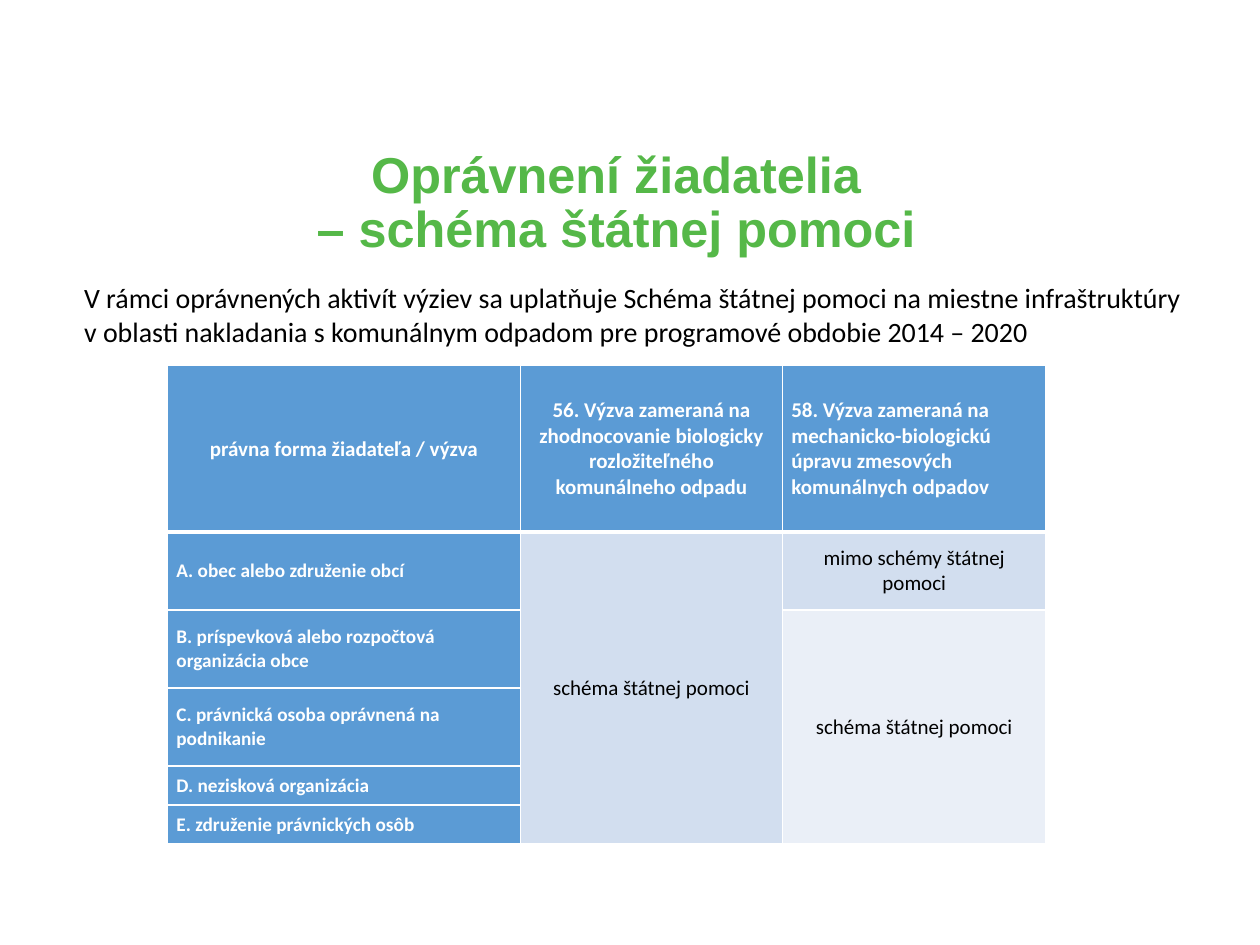
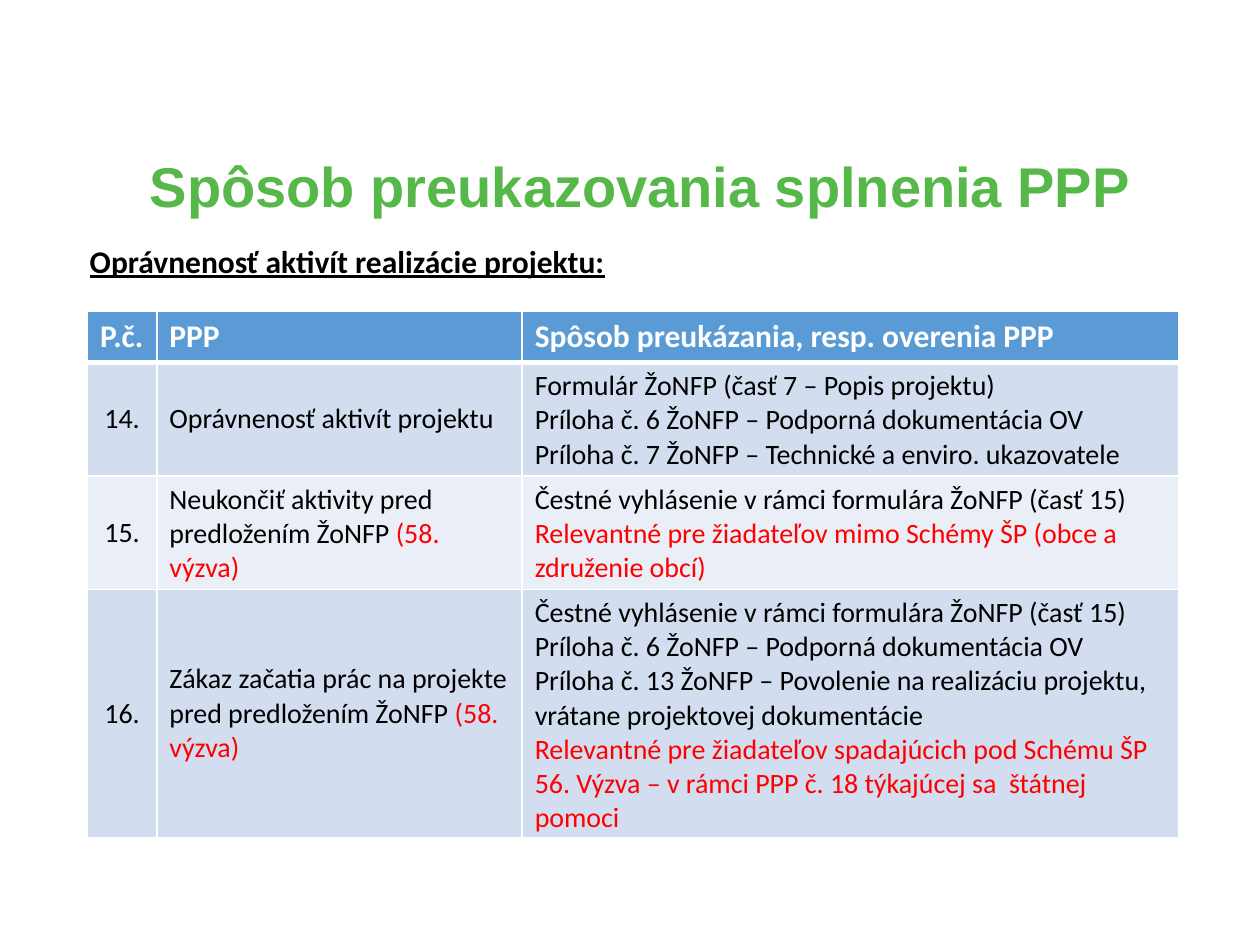
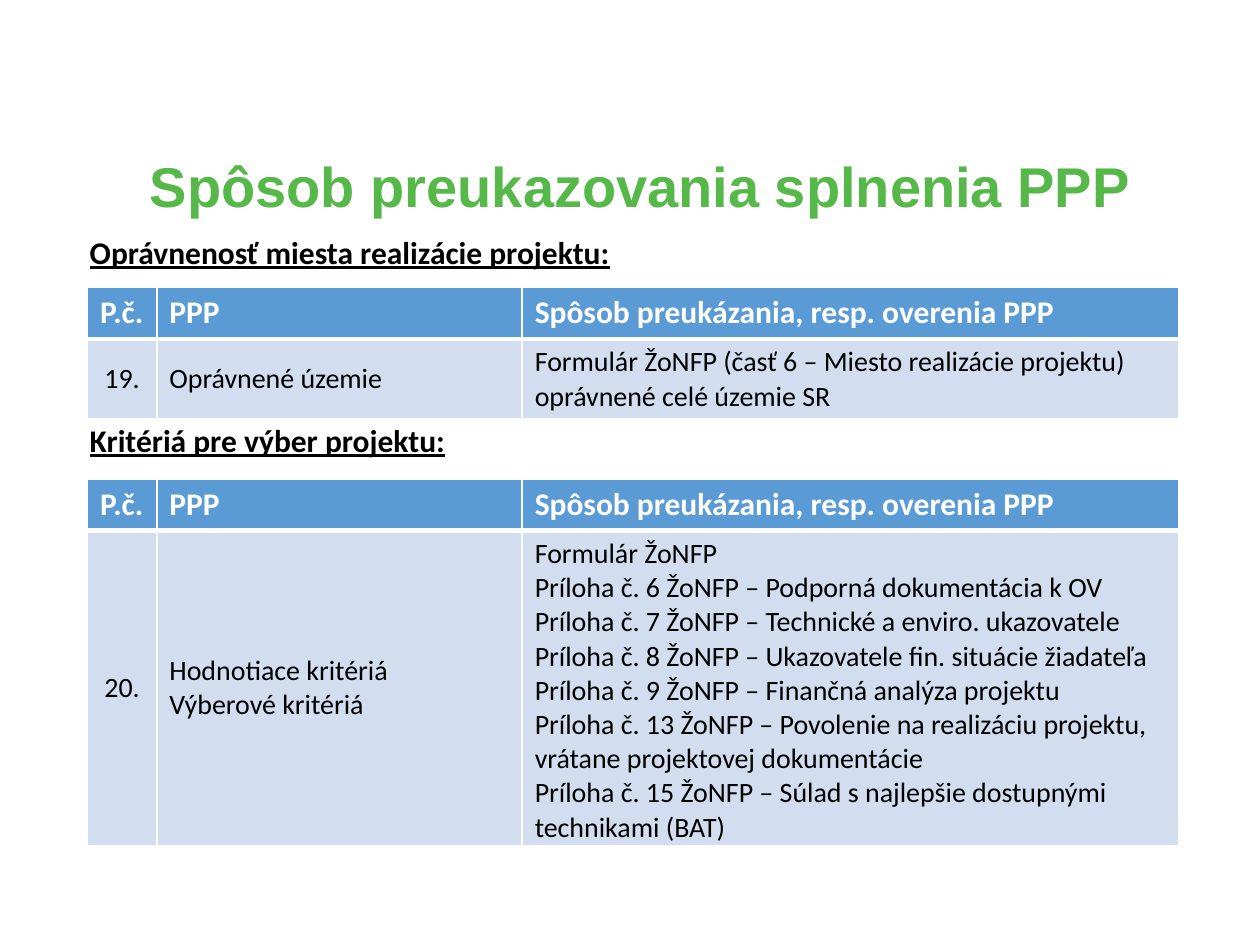
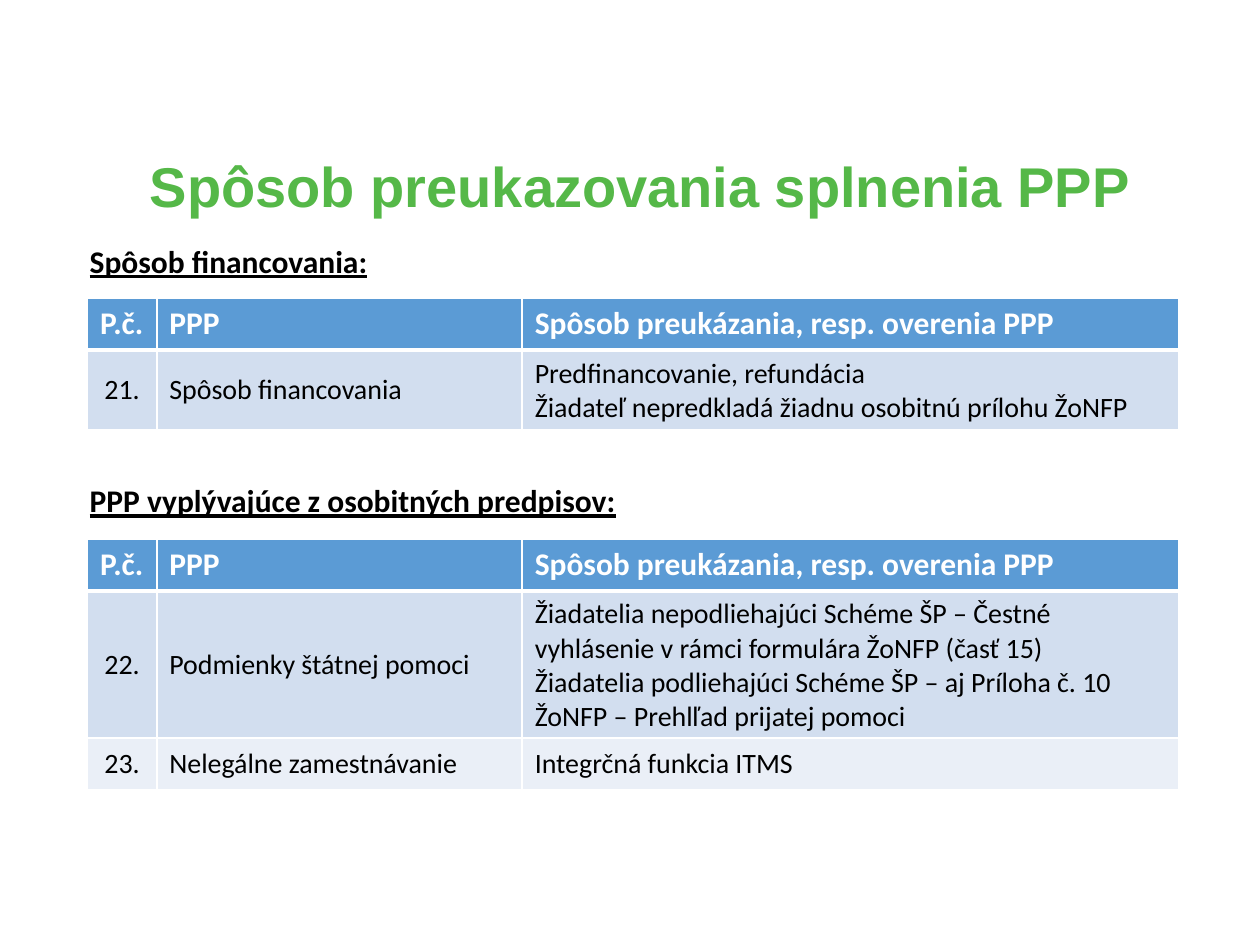
from lxml.etree import SubElement
from pptx import Presentation
from pptx.dml.color import RGBColor
from pptx.enum.text import MSO_ANCHOR, MSO_AUTO_SIZE, PP_ALIGN
from pptx.oxml.ns import qn
from pptx.util import Pt

COLORS = {"green": "55B848", "blue": "5B9BD5", "band": "D2DEEF", "pale": "EAEFF7",
          "white": "FFFFFF", "black": "000000", "red": "FF0000"}
HEAD_FONT, BODY_FONT = "Arial", "Calibri"

# Slide 1: (row, column, rows spanned, text, fill, size, align)
AID_TITLE = "Oprávnení žiadatelia\v– schéma štátnej pomoci"
AID_INTRO = ("V rámci oprávnených aktivít výziev sa uplatňuje Schéma štátnej pomoci na miestne "
             "infraštruktúry v oblasti nakladania s komunálnym odpadom pre programové obdobie "
             "2014 – 2020")
AID_COLS = [201.6, 149.8, 150.5]
AID_ROWS = [95, 44.6, 44.6, 44.6, 22.3, 22.3]
AID_CELLS = [
    (0, 0, 1, "právna forma žiadateľa / výzva", "blue", 12, "center"),
    (0, 1, 1, "56. Výzva zameraná na zhodnocovanie biologicky rozložiteľného "
              "komunálneho odpadu", "blue", 12, "center"),
    (0, 2, 1, "58. Výzva zameraná na mechanicko-biologickú úpravu zmesových "
              "komunálnych odpadov", "blue", 12, "left"),
    (1, 0, 1, "A. obec alebo združenie obcí", "blue", 11, "left"),
    (2, 0, 1, "B. príspevková alebo rozpočtová organizácia obce", "blue", 11, "left"),
    (3, 0, 1, "C. právnická osoba oprávnená na podnikanie", "blue", 11, "left"),
    (4, 0, 1, "D. nezisková organizácia", "blue", 11, "left"),
    (5, 0, 1, "E. združenie právnických osôb", "blue", 11, "left"),
    (1, 1, 5, "schéma štátnej pomoci", "band", 12, "center"),
    (1, 2, 1, "mimo schémy štátnej pomoci", "band", 12, "center"),
    (2, 2, 4, "schéma štátnej pomoci", "pale", 12, "center"),
]

# Slides 2 to 4: sections of (heading, heading top, table top, rows);
# a row is (number, condition, proof, lines of text).
# A paragraph is a string, or a pair of a black and a red part.
PPP_TITLE = "Spôsob preukazovania splnenia PPP"
PPP_HEADER = ["P.č.", "PPP", "Spôsob preukázania, resp. overenia PPP"]
PPP_COLS = [39.6, 208.8, 375.1]
PPP_SLIDES = [
    [("Oprávnenosť aktivít realizácie projektu:", 134.6, 177.8, [
        ("14.", ["Oprávnenosť aktivít projektu"],
         ["Formulár ŽoNFP (časť 7 – Popis projektu)",
          "Príloha č. 6 ŽoNFP – Podporná dokumentácia OV",
          "Príloha č. 7 ŽoNFP – Technické a enviro. ukazovatele"], 3),
        ("15.", [("Neukončiť aktivity pred predložením ŽoNFP ", "(58. výzva)")],
         ["Čestné vyhlásenie v rámci formulára ŽoNFP (časť 15)",
          ("", "Relevantné pre žiadateľov mimo Schémy ŠP (obce a združenie obcí)")], 3),
        ("16.", [("Zákaz začatia prác na projekte pred predložením ŽoNFP ", "(58. výzva)")],
         ["Čestné vyhlásenie v rámci formulára ŽoNFP (časť 15)",
          "Príloha č. 6 ŽoNFP – Podporná dokumentácia OV",
          "Príloha č. 13 ŽoNFP – Povolenie na realizáciu projektu, vrátane projektovej "
          "dokumentácie",
          ("", "Relevantné pre žiadateľov spadajúcich pod Schému ŠP"),
          ("", "56. Výzva – v rámci PPP č. 18 týkajúcej sa  štátnej pomoci")], 7),
    ])],
    [("Oprávnenosť miesta realizácie projektu:", 129.6, 164.2, [
        ("19.", ["Oprávnené územie"],
         ["Formulár ŽoNFP (časť 6 – Miesto realizácie projektu) oprávnené celé územie SR"], 2),
    ]),
     ("Kritériá pre výber projektu:", 237, 273.6, [
         ("20.", ["Hodnotiace kritériá", "Výberové kritériá"],
          ["Formulár ŽoNFP",
           "Príloha č. 6 ŽoNFP – Podporná dokumentácia k OV",
           "Príloha č. 7 ŽoNFP – Technické a enviro. ukazovatele",
           "Príloha č. 8 ŽoNFP – Ukazovatele fin. situácie žiadateľa",
           "Príloha č. 9 ŽoNFP – Finančná analýza projektu",
           "Príloha č. 13 ŽoNFP – Povolenie na realizáciu projektu, vrátane projektovej "
           "dokumentácie",
           "Príloha č. 15 ŽoNFP – Súlad s najlepšie dostupnými technikami (BAT)"], 9),
     ])],
    [("Spôsob financovania:", 134.6, 170.6, [
        ("21.", ["Spôsob financovania"],
         ["Predfinancovanie, refundácia",
          "Žiadateľ nepredkladá žiadnu osobitnú prílohu ŽoNFP"], 2),
    ]),
     ("PPP vyplývajúce z osobitných predpisov:", 271.4, 308.2, [
         ("22.", ["Podmienky štátnej pomoci"],
          ["Žiadatelia nepodliehajúci Schéme ŠP – Čestné vyhlásenie v rámci formulára "
           "ŽoNFP (časť 15)",
           "Žiadatelia podliehajúci Schéme ŠP – aj Príloha č. 10 ŽoNFP – Prehlľad "
           "prijatej pomoci"], 4),
         ("23.", ["Nelegálne zamestnávanie"], ["Integrčná funkcia ITMS"], 1),
     ])],
]

ALIGN = {"left": PP_ALIGN.LEFT, "center": PP_ALIGN.CENTER}


def rgb(name):
    return RGBColor.from_string(COLORS[name])


def style(para, size, color="black", bold=False, font=BODY_FONT, align="left"):
    para.alignment = ALIGN[align]
    face = para.font
    face.name, face.size, face.bold = font, Pt(size), bold
    face.color.rgb = rgb(color)


def add_slide(deck, title, left, top, width, height, size):
    slide = deck.slides.add_slide(deck.slide_layouts[5])
    box = slide.shapes.title
    box.left, box.top, box.width, box.height = Pt(left), Pt(top), Pt(width), Pt(height)
    frame = box.text_frame
    frame.text = title
    frame.auto_size = MSO_AUTO_SIZE.NONE
    frame.vertical_anchor = MSO_ANCHOR.MIDDLE
    para = frame.paragraphs[0]
    para.line_spacing = 0.9
    style(para, size, "green", True, HEAD_FONT, "center")
    return slide


def add_text(slide, text, left, top, width, height):
    frame = slide.shapes.add_textbox(Pt(left), Pt(top), Pt(width), Pt(height)).text_frame
    frame.word_wrap = True
    frame.text = text
    return frame.paragraphs[0]


def add_grid(slide, left, top, cols, rows):
    """Add a table with white rules, thicker below the header row."""
    table = slide.shapes.add_table(len(rows), len(cols), Pt(left), Pt(top),
                                   Pt(sum(cols)), Pt(sum(rows))).table
    table.horz_banding = False
    for col, width in zip(table.columns, cols):
        col.width = Pt(width)
    for i, (row, height) in enumerate(zip(table.rows, rows)):
        row.height = Pt(height)
        for cell in row.cells:
            add_rules(cell, i)
    return table


def add_rules(cell, row):
    thick = {(0, "lnB"), (1, "lnT")}
    props = cell._tc.get_or_add_tcPr()
    for side in ("lnL", "lnR", "lnT", "lnB"):
        width = Pt(3 if (row, side) in thick else 1)
        line = SubElement(props, qn(f"a:{side}"), w=str(width))
        fill = SubElement(line, qn("a:solidFill"))
        SubElement(fill, qn("a:srgbClr"), val=COLORS["white"])


def fill_cell(cell, paras, fill, size, align="left", anchor=MSO_ANCHOR.MIDDLE):
    cell.fill.solid()
    cell.fill.fore_color.rgb = rgb(fill)
    cell.vertical_anchor = anchor
    head = fill == "blue"
    frame = cell.text_frame
    for i, parts in enumerate(paras):
        para = frame.add_paragraph() if i else frame.paragraphs[0]
        black, red = (parts, "") if isinstance(parts, str) else parts
        if black:
            para.add_run().text = black
        if red:
            run = para.add_run()
            run.text = red
            run.font.color.rgb = rgb("red")
        style(para, size, "white" if head else "black", head, align=align)


def aid_slide(deck):
    slide = add_slide(deck, AID_TITLE, 28.5, 85.7, 647.3, 62, 28.8)
    table = add_grid(slide, 95.8, 209, AID_COLS, AID_ROWS)
    table.first_col = True
    for row, col, span, text, fill, size, align in AID_CELLS:
        cell = table.cell(row, col)
        if span > 1:
            cell.merge(table.cell(row + span - 1, col))
        cell.margin_left = cell.margin_right = Pt(5)
        cell.margin_top = cell.margin_bottom = 0
        fill_cell(cell, [text], fill, size, align)
    style(add_text(slide, AID_INTRO, 41, 157, 649.4, 46), 16)


def ppp_slide(deck, sections):
    slide = add_slide(deck, PPP_TITLE, 43.9, 73.4, 644.4, 69.1, 32)
    for heading, head_top, top, rows in sections:
        para = add_text(slide, heading, 44.2, head_top, 614, 29)
        style(para, 18, bold=True)
        para.font.underline = True
        heights = [29.5] + [max(29.5, lines * 19.2 + 7.2) for *_, lines in rows]
        table = add_grid(slide, 50, top, PPP_COLS, heights)
        for col, text in enumerate(PPP_HEADER):
            fill_cell(table.cell(0, col), [text], "blue", 18, anchor=MSO_ANCHOR.TOP)
        for i, (number, rule, proof, _) in enumerate(rows, 1):
            fill = "band" if i % 2 else "pale"
            fill_cell(table.cell(i, 0), [number], fill, 16, "center")
            fill_cell(table.cell(i, 1), rule, fill, 16)
            fill_cell(table.cell(i, 2), proof, fill, 16)


def main():
    deck = Presentation()
    deck.slide_width, deck.slide_height = Pt(720), Pt(540)
    aid_slide(deck)
    for sections in PPP_SLIDES:
        ppp_slide(deck, sections)
    deck.save("out.pptx")


if __name__ == "__main__":
    main()
